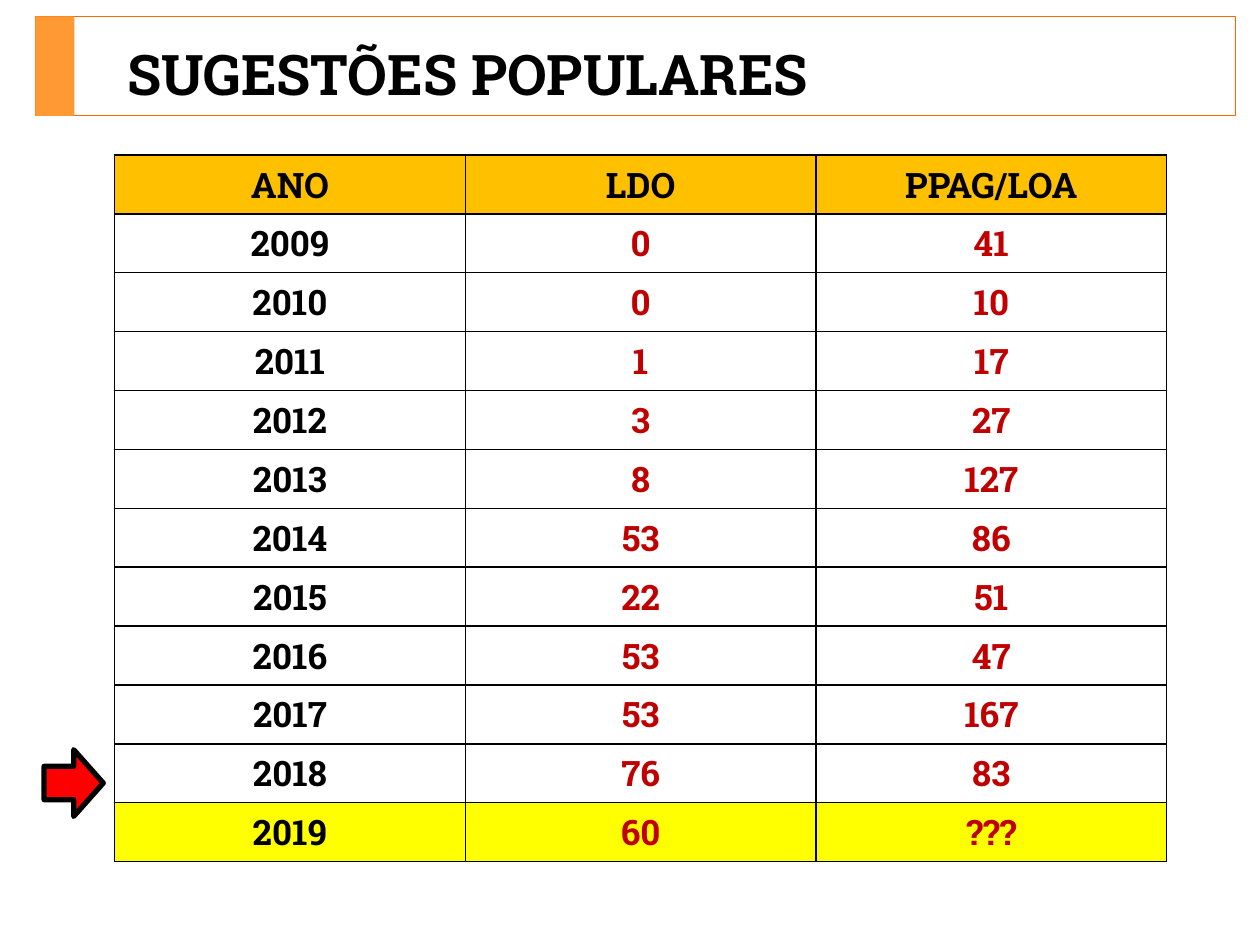
from lxml.etree import SubElement
from pptx import Presentation
from pptx.dml.color import RGBColor
from pptx.enum.shapes import MSO_SHAPE
from pptx.enum.text import MSO_ANCHOR, PP_ALIGN
from pptx.oxml.ns import qn
from pptx.util import Inches, Pt

FONT = "Roboto Slab"
COLORS = {
    "black": "000000",
    "white": "FFFFFF",
    "frame": "FF6600",
    "band": "FF9933",
    "header": "FFC000",
    "highlight": "FFFF00",
    "number": "C00000",
    "arrow": "FF0000",
}
HEADINGS = ("ANO", "LDO", "PPAG/LOA")
SUGGESTIONS = (
    ("2009", "0", "41"),
    ("2010", "0", "10"),
    ("2011", "1", "17"),
    ("2012", "3", "27"),
    ("2013", "8", "127"),
    ("2014", "53", "86"),
    ("2015", "22", "51"),
    ("2016", "53", "47"),
    ("2017", "53", "167"),
    ("2018", "76", "83"),
    ("2019", "60", "???"),
)


def rgb(name):
    return RGBColor.from_string(COLORS[name])


def add_text(para, text, size, color, align):
    para.alignment = align
    span = para.add_run()
    span.text = text
    span.font.name = FONT
    span.font.size = Pt(size)
    span.font.bold = True
    span.font.color.rgb = rgb(color)


def add_box(page, kind, left, top, width, height, fill=None, line=None, weight=0):
    box = page.shapes.add_shape(
        kind, Inches(left), Inches(top), Inches(width), Inches(height)
    )
    box.shadow.inherit = False
    if fill:
        box.fill.solid()
        box.fill.fore_color.rgb = rgb(fill)
    else:
        box.fill.background()
    if line:
        box.line.color.rgb = rgb(line)
        box.line.width = Pt(weight)
    else:
        box.line.fill.background()


def format_title(page, text):
    title = page.shapes.title
    title.left, title.top = Inches(0.91), Inches(0.29)
    title.width, title.height = Inches(8.52), Inches(0.55)
    frame = title.text_frame
    frame.word_wrap = True
    frame.vertical_anchor = MSO_ANCHOR.TOP
    frame.margin_top, frame.margin_bottom = Inches(0.02), 0
    add_text(frame.paragraphs[0], text, 32, "black", PP_ALIGN.LEFT)


def add_borders(cell):
    properties = cell._tc.get_or_add_tcPr()
    for index, side in enumerate(("lnL", "lnR", "lnT", "lnB")):
        border = SubElement(properties, qn(f"a:{side}"), w=str(Pt(1)))
        fill = SubElement(border, qn("a:solidFill"))
        SubElement(fill, qn("a:srgbClr"), val=COLORS["black"])
        properties.insert(index, border)


def add_suggestions_table(page):
    rows = (HEADINGS, *SUGGESTIONS)
    table = page.shapes.add_table(
        len(rows), len(HEADINGS), Inches(0.91), Inches(1.23), Inches(8.35), Inches(5.2)
    ).table
    for row in table.rows:
        row.height = Inches(0.41)
    fills = ["header"] + ["white"] * (len(rows) - 2) + ["highlight"]
    for row_index, (values, fill) in enumerate(zip(rows, fills)):
        for column_index, value in enumerate(values):
            cell = table.cell(row_index, column_index)
            cell.fill.solid()
            cell.fill.fore_color.rgb = rgb(fill)
            add_borders(cell)
            color = "number" if row_index and column_index else "black"
            add_text(cell.text_frame.paragraphs[0], value, 20, color, PP_ALIGN.CENTER)


def main():
    deck = Presentation()
    deck.slide_width, deck.slide_height = Inches(10), Inches(7.5)
    page = deck.slides.add_slide(deck.slide_layouts[5])
    add_box(page, MSO_SHAPE.RECTANGLE, 0.28, 0.13, 9.53, 0.79, line="frame", weight=0.5)
    add_box(page, MSO_SHAPE.RECTANGLE, 0.28, 0.13, 0.31, 0.79, fill="band")
    format_title(page, "SUGESTÕES POPULARES")
    add_suggestions_table(page)
    add_box(
        page, MSO_SHAPE.RIGHT_ARROW, 0.35, 5.95, 0.47, 0.53,
        fill="arrow", line="black", weight=3,
    )
    deck.save("out.pptx")


if __name__ == "__main__":
    main()
